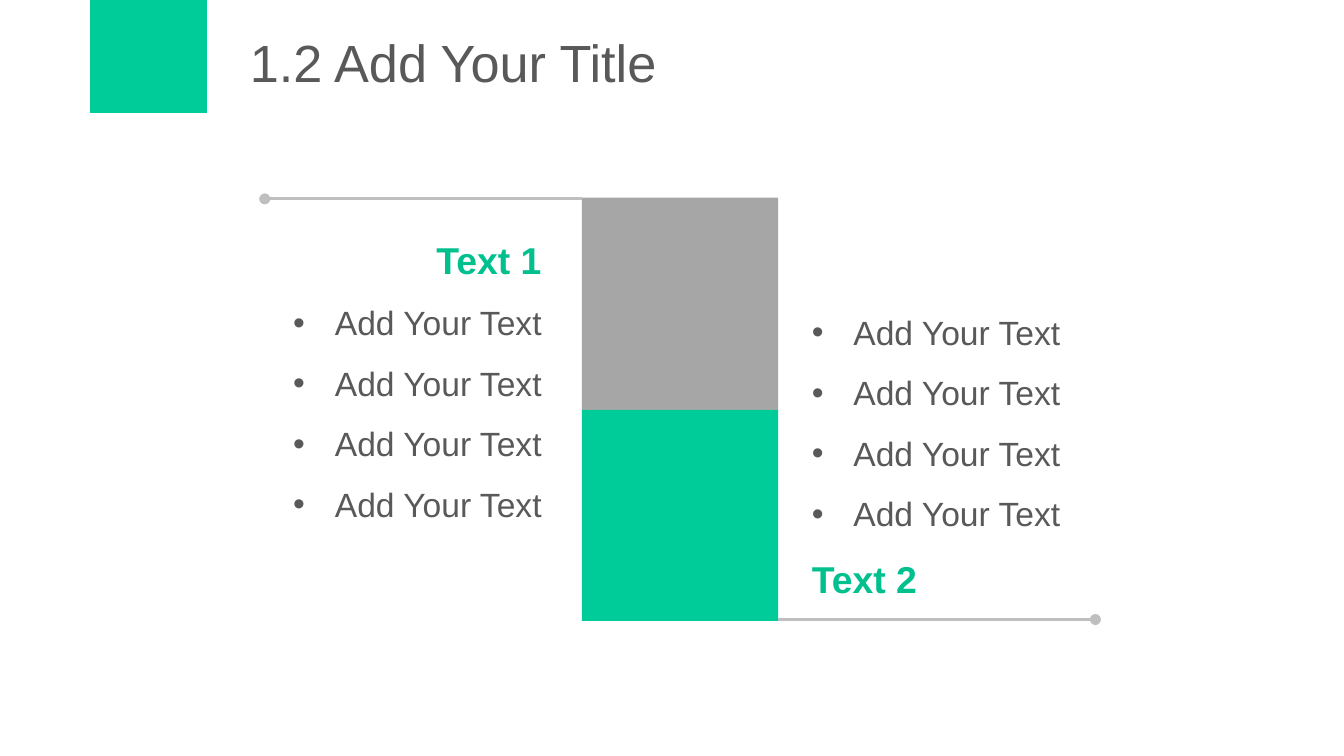
from lxml import etree
from pptx import Presentation
from pptx.dml.color import RGBColor
from pptx.enum.shapes import MSO_CONNECTOR as CONN, MSO_SHAPE as SHAPE
from pptx.enum.text import MSO_ANCHOR as ANCHOR, MSO_AUTO_SIZE as AUTO, PP_ALIGN as ALIGN
from pptx.oxml.ns import qn
from pptx.util import Inches, Pt

GREEN = RGBColor(0x00, 0xCC, 0x99)
DARK_GREEN = RGBColor(0x00, 0xC0, 0x8E)
GRAY = RGBColor(0xA6, 0xA6, 0xA6)
LINE_GRAY = RGBColor(0xBF, 0xBF, 0xBF)
TEXT_GRAY = RGBColor(0x59, 0x59, 0x59)

TITLE = {"name": "Arial", "size": Pt(28), "bold": False}
HEADING = {"name": "Arial", "size": Pt(20), "bold": True}
ITEM = {"name": "Arial", "size": Pt(18), "bold": False}


def place(sp, *box):
    sp.left, sp.top, sp.width, sp.height = [Inches(v) for v in box]


def add_run(p, text, font, color):
    r = p.add_run()
    r.text = text
    for key, value in font.items():
        setattr(r.font, key, value)
    r.font.color.rgb = color


prs = Presentation()
prs.slide_width = Inches(10)
prs.slide_height = prs.slide_width * 9 // 16
s = prs.slides.add_slide(prs.slide_layouts[3])
for ph in list(s.placeholders):
    if ph.placeholder_format.idx > 2:
        ph.element.getparent().remove(ph.element)

title = s.shapes.title
place(title, 1.76, 0.14, 7.89, 0.63)
tf = title.text_frame
tf.vertical_anchor, tf.auto_size = ANCHOR.MIDDLE, AUTO.NONE
p = tf.paragraphs[0]
p.alignment = ALIGN.LEFT
add_run(p, "1.2 Add Your Title", TITLE, TEXT_GRAY)

blocks = [
    ((0.67, 0, 0.87, 0.84), GREEN),
    ((4.33, 1.47, 1.46, 1.58), GRAY),
    ((4.33, 3.05, 1.46, 1.57), GREEN),
]
for box, color in blocks:
    sp = s.shapes.add_shape(SHAPE.RECTANGLE, *[Inches(v) for v in box])
    sp.shadow.inherit = False
    sp.fill.solid()
    sp.fill.fore_color.rgb = color
    sp.line.fill.background()

for x1, x2, y in [(5.79, 8.15, 4.61), (4.33, 1.97, 1.48)]:
    cn = s.shapes.add_connector(CONN.STRAIGHT, Inches(x1), Inches(y), Inches(x2), Inches(y))
    cn.line.color.rgb = LINE_GRAY
    cn.line.width = Pt(1.5)
    spPr = cn.element.spPr
    etree.SubElement(spPr.get_or_add_ln(), qn("a:tailEnd"), type="oval")
    etree.SubElement(spPr, qn("a:effectLst"))

items = ["Add Your Text"] * 4
columns = [
    (1, (1.76, 1.55, 2.37, 2.42), ALIGN.RIGHT, ["Text 1"] + items),
    (2, (5.94, 2.12, 2.44, 2.42), ALIGN.LEFT, items + ["Text 2"]),
]
for idx, box, align, lines in columns:
    body = s.placeholders[idx]
    place(body, *box)
    tf = body.text_frame
    tf.word_wrap, tf.auto_size = True, AUTO.SHAPE_TO_FIT_TEXT
    for i, text in enumerate(lines):
        p = tf.paragraphs[0] if i == 0 else tf.add_paragraph()
        pPr = p._p.get_or_add_pPr()
        if text in items:
            pPr.set("marL", str(Inches(0.31)))
            pPr.set("indent", str(Inches(-0.31)))
            etree.SubElement(pPr, qn("a:buFont"), typeface="Arial")
            etree.SubElement(pPr, qn("a:buChar"), char="•")
            add_run(p, text, ITEM, TEXT_GRAY)
        else:
            pPr.set("marL", "0")
            pPr.set("indent", "0")
            etree.SubElement(pPr, qn("a:buNone"))
            add_run(p, text, HEADING, DARK_GREEN)
        p.alignment, p.line_spacing, p.space_before = align, 1.5, Pt(0)

prs.save("out.pptx")
